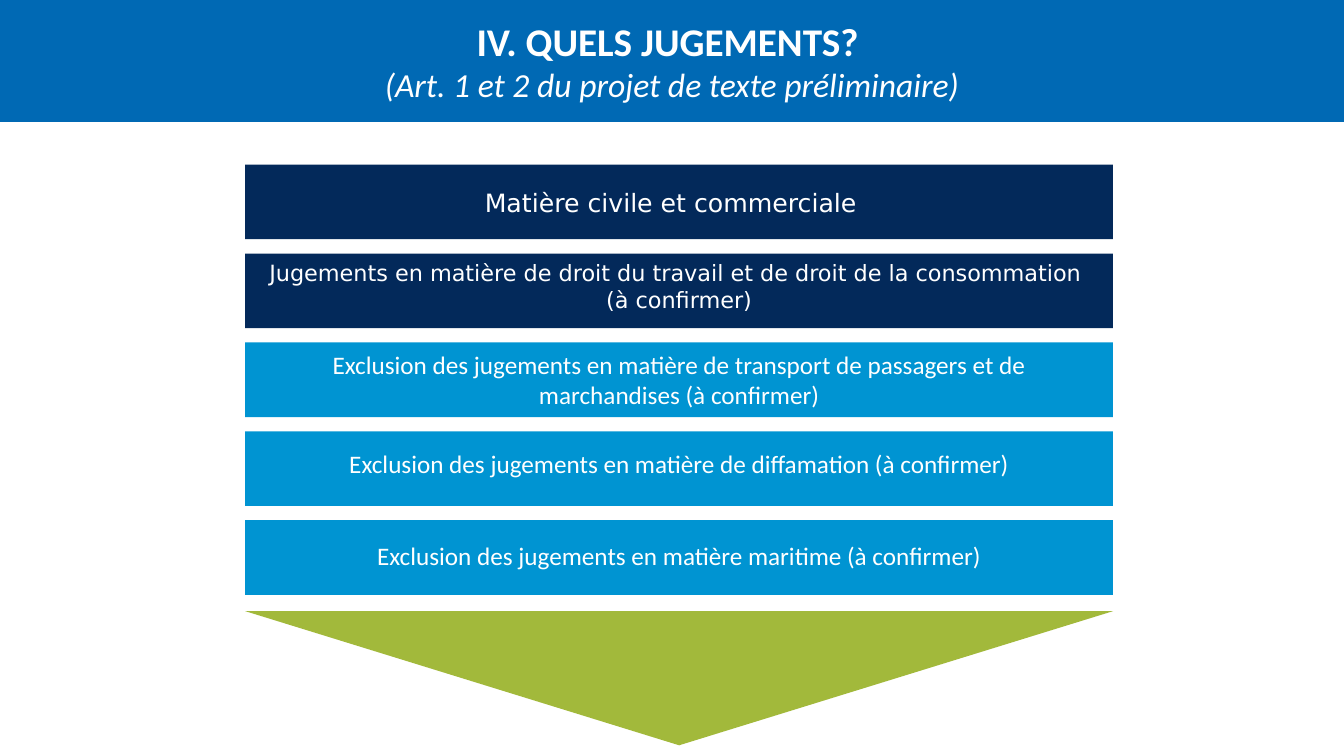
from pptx import Presentation
from pptx.dml.color import RGBColor
from pptx.enum.shapes import MSO_SHAPE as Shape
from pptx.enum.text import MSO_ANCHOR as Anchor, PP_ALIGN as Align
from pptx.util import Cm, Pt

BLUE, NAVY, SKY, GREEN, WHITE = "0069B4", "03295A", "0094D2", "A2B93B", "FFFFFF"

# text, size, bold, italic
TITLE = [
    ("IV. QUELS JUGEMENTS? ", 28, True, False),
    ("(Art. 1 et 2 du projet de texte préliminaire)", 24, False, True),
]

# fill, font, size, margins (left, right, bottom) in cm, lines
BARS = [
    (NAVY, "DejaVu Sans", 18, (0.25, 0.67, 0), ["Matière civile et commerciale"]),
    (NAVY, "DejaVu Sans", 16, (0.25, 0.25, 0.25),
     ["Jugements en matière de droit du travail et de droit de la consommation ",
      "(à confirmer)"]),
    (SKY, "Calibri", 18, (1.15, 1.15, 0),
     ["Exclusion des jugements en matière de transport de passagers et de "
      "marchandises (à confirmer)"]),
    (SKY, "Calibri", 18, (0.25, 0.25, 0.25),
     ["Exclusion des jugements en matière de diffamation (à confirmer)"]),
    (SKY, "Calibri", 18, (0.25, 0.25, 0.13),
     ["Exclusion des jugements en matière maritime (à confirmer)"]),
]

SLIDE_WIDTH, SLIDE_HEIGHT = 33.87, 19.05
HEADER_HEIGHT = 3.07
BAR_LEFT, BAR_TOP, BAR_WIDTH, BAR_HEIGHT, BAR_STEP = 6.18, 4.15, 21.87, 1.88, 2.24
ARROW_TOP, ARROW_HEIGHT = 15.4, 3.38


def color(hex_string):
    return RGBColor.from_string(hex_string)


def add_block(slide, kind, left, top, width, height, fill):
    """Add a flat shape without outline; lengths in cm."""
    shape = slide.shapes.add_shape(kind, Cm(left), Cm(top), Cm(width), Cm(height))
    shape.shadow.inherit = False
    shape.fill.solid()
    shape.fill.fore_color.rgb = color(fill)
    shape.line.fill.background()
    return shape


def write_lines(shape, lines, font_name):
    """Fill a shape with centred white lines of (text, size, bold, italic)."""
    frame = shape.text_frame
    frame.word_wrap = True
    frame.vertical_anchor = Anchor.MIDDLE
    for index, (text, size, bold, italic) in enumerate(lines):
        paragraph = frame.add_paragraph() if index else frame.paragraphs[0]
        paragraph.text = text
        paragraph.alignment = Align.CENTER
        font = paragraph.font
        font.name, font.size, font.bold, font.italic = font_name, Pt(size), bold, italic
        font.color.rgb = color(WHITE)


def main():
    presentation = Presentation()
    presentation.slide_width = Cm(SLIDE_WIDTH)
    presentation.slide_height = Cm(SLIDE_HEIGHT)
    slide = presentation.slides.add_slide(presentation.slide_layouts[6])

    header = add_block(slide, Shape.RECTANGLE, 0, 0, SLIDE_WIDTH, HEADER_HEIGHT, BLUE)
    write_lines(header, TITLE, "Calibri")

    for row, (fill, font_name, size, margins, lines) in enumerate(BARS):
        bar = add_block(slide, Shape.RECTANGLE, BAR_LEFT, BAR_TOP + row * BAR_STEP,
                        BAR_WIDTH, BAR_HEIGHT, fill)
        write_lines(bar, [(line, size, False, False) for line in lines], font_name)
        frame = bar.text_frame
        frame.margin_left, frame.margin_right, frame.margin_bottom = map(Cm, margins)
        frame.margin_top = 0

    arrow = add_block(slide, Shape.ISOSCELES_TRIANGLE, BAR_LEFT, ARROW_TOP,
                      BAR_WIDTH, ARROW_HEIGHT, GREEN)
    arrow.rotation = 180
    arrow.adjustments[0] = 0.5

    presentation.save("out.pptx")


if __name__ == "__main__":
    main()
